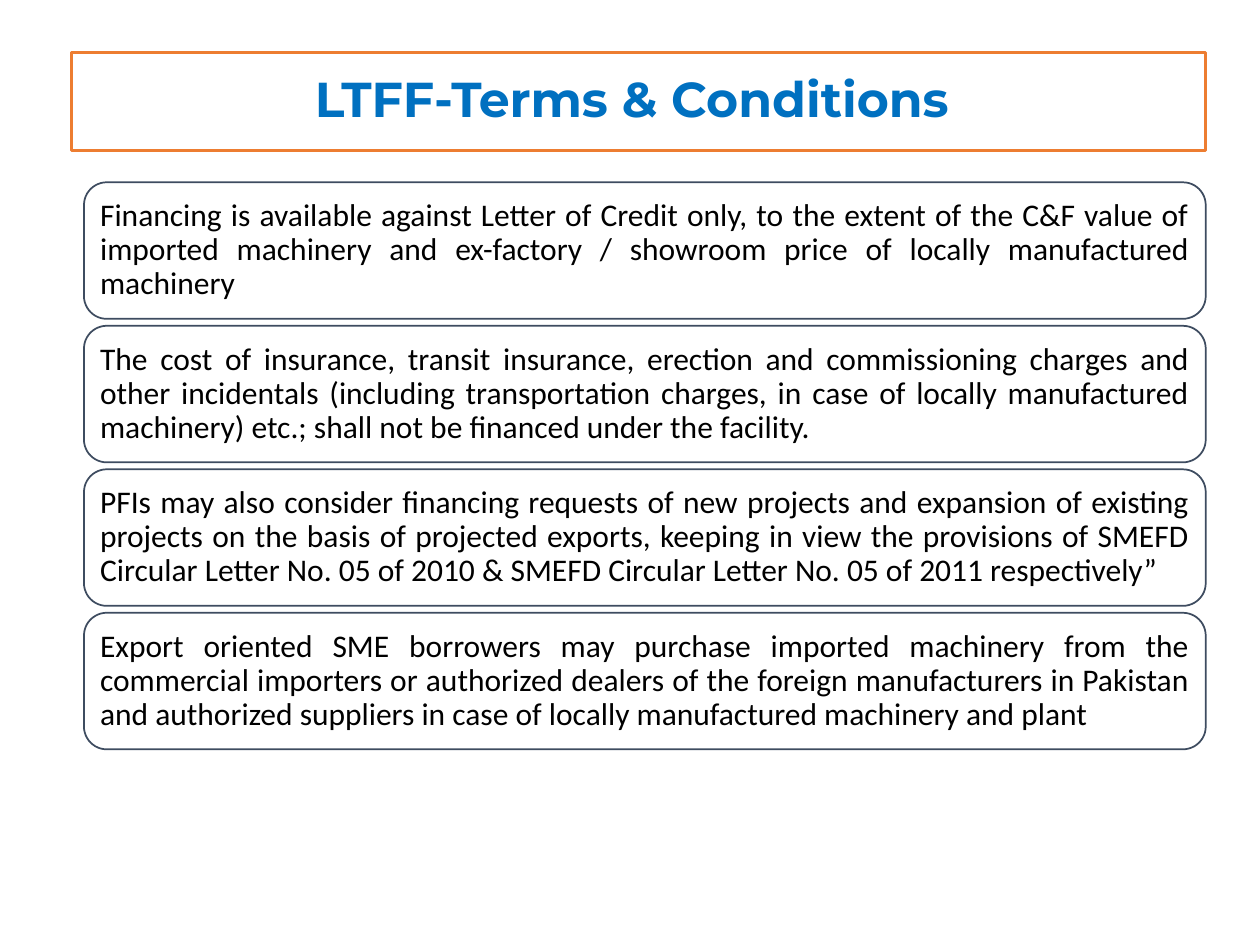
from pptx import Presentation
from pptx.dml.color import RGBColor
from pptx.enum.shapes import MSO_SHAPE as Shape
from pptx.enum.text import MSO_ANCHOR as Anchor, PP_ALIGN as Align
from pptx.util import Pt

WHITE = RGBColor(0xFF, 0xFF, 0xFF)
BLACK = RGBColor(0x00, 0x00, 0x00)
BLUE = RGBColor(0x00, 0x70, 0xC0)
ORANGE = RGBColor(0xED, 0x7D, 0x31)
SLATE = RGBColor(0x3E, 0x4C, 0x60)

TERMS = [
    "Financing is available against Letter of Credit only, to the extent of the C&F value of "
    "imported machinery and ex-factory / showroom price of locally manufactured machinery",
    "The cost of insurance, transit insurance, erection and commissioning charges and other "
    "incidentals (including transportation charges, in case of locally manufactured "
    "machinery) etc.; shall not be financed under the facility. ",
    "PFIs may also consider financing requests of new projects and expansion of existing "
    "projects on the basis of projected exports, keeping in view the provisions of SMEFD "
    "Circular Letter No. 05 of 2010 & SMEFD Circular Letter No. 05 of 2011 respectively”",
    "Export oriented SME borrowers may purchase imported machinery from the commercial "
    "importers or authorized dealers of the foreign manufacturers in Pakistan and authorized "
    "suppliers in case of locally manufactured machinery and plant",
]
TERM_LEFT, TERM_TOP, TERM_WIDTH, TERM_HEIGHT = 48, 104.2, 641, 78
TERM_PITCH = 82
TERM_INSET = 5.4


def add_box(preset, left, top, width, height, line_color, line_width):
    box = slide.shapes.add_shape(preset, Pt(left), Pt(top), Pt(width), Pt(height))
    box.shadow.inherit = False
    box.line.color.rgb = line_color
    box.line.width = Pt(line_width)
    return box


def write(box, text, align, font_name, size, color, bold=False):
    frame = box.text_frame
    frame.text = text
    frame.word_wrap = True
    frame.vertical_anchor = Anchor.MIDDLE
    paragraph = frame.paragraphs[0]
    paragraph.alignment = align
    paragraph.line_spacing = 0.9
    font = paragraph.runs[0].font
    font.name = font_name
    font.size = Pt(size)
    font.bold = bold
    font.color.rgb = color


prs = Presentation()
prs.slide_width, prs.slide_height = Pt(720), Pt(540)
slide = prs.slides.add_slide(prs.slide_layouts[6])

title = add_box(Shape.RECTANGLE, 41, 30, 648, 56, ORANGE, 2)
title.fill.background()
write(title, "LTFF-Terms & Conditions ", Align.CENTER, "Montserrat", 28, BLUE, bold=True)

for row, term in enumerate(TERMS):
    card = add_box(Shape.ROUNDED_RECTANGLE, TERM_LEFT, TERM_TOP + row * TERM_PITCH,
                   TERM_WIDTH, TERM_HEIGHT, SLATE, 1)
    card.fill.solid()
    card.fill.fore_color.rgb = WHITE
    write(card, term, Align.JUSTIFY, "Calibri", 18, BLACK)
    frame = card.text_frame
    frame.margin_left = frame.margin_right = Pt(TERM_INSET)
    frame.margin_top = frame.margin_bottom = Pt(TERM_INSET)

prs.save("out.pptx")
